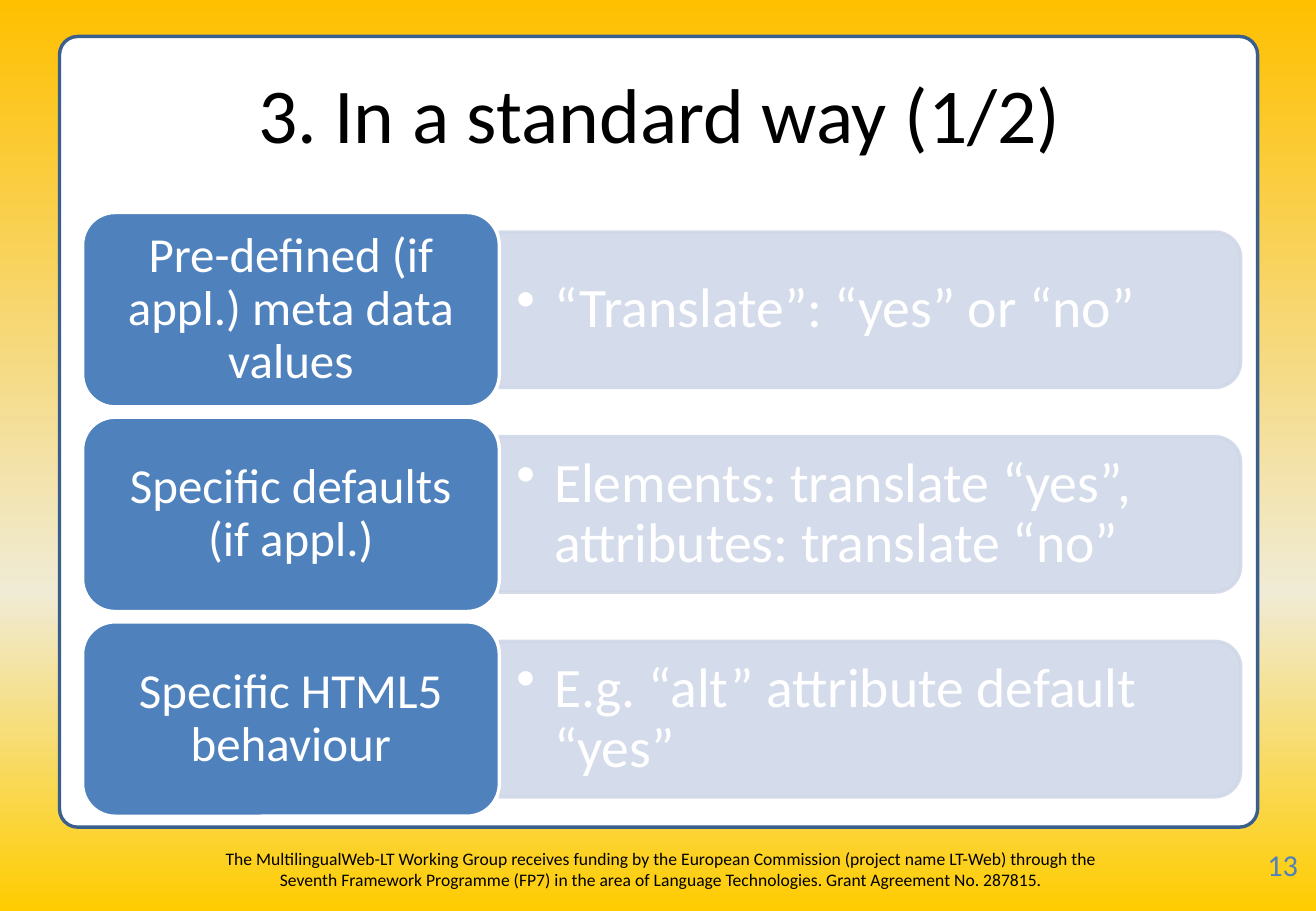
from copy import deepcopy

from lxml import etree
from pptx import Presentation
from pptx.dml.color import RGBColor
from pptx.enum.shapes import MSO_SHAPE
from pptx.enum.text import MSO_ANCHOR, PP_ALIGN
from pptx.oxml.ns import qn
from pptx.util import Inches, Pt

ROUNDED = MSO_SHAPE.ROUNDED_RECTANGLE
ROUNDED_TOP = MSO_SHAPE.ROUND_2_SAME_RECTANGLE
CENTER, LEFT = PP_ALIGN.CENTER, PP_ALIGN.LEFT
MIDDLE, TOP = MSO_ANCHOR.MIDDLE, MSO_ANCHOR.TOP

COLORS = {
    "amber": "FFC000",
    "cream": "F0EBD5",
    "gold": "FFCC00",
    "white": "FFFFFF",
    "black": "000000",
    "frame": "3A5F8C",
    "blue": "4F81BD",
    "pale": "D0D8E8",
}
BACKGROUND = [(0, "amber"), (0.65, "cream"), (1, "gold")]
ROWS = [
    ("Pre-defined (if appl.) meta data values", "“Translate”: “yes” or “no”"),
    ("Specific defaults (if appl.)", "Elements: translate “yes”, attributes: translate “no”"),
    ("Specific HTML5 behaviour", "E.g. “alt” attribute default “yes”"),
]
FOOTER = (
    "The MultilingualWeb-LT Working Group receives funding by the European Commission "
    "(project name LT-Web) through the Seventh Framework Programme (FP7) in the area of "
    "Language Technologies. Grant Agreement No. 287815."
)

ROW_TOP, ROW_STEP = 1.75, 1.685
LABEL_LEFT, LABEL_WIDTH, LABEL_HEIGHT = 0.68, 3.43, 1.6
BAR_LEFT, BAR_WIDTH, BAR_HEIGHT = 4.11, 6.1, 1.28


class SlideBuilder:
    font = "Calibri"

    def __init__(self, page):
        self.page = page

    def color(self, name):
        return RGBColor.from_string(COLORS[name])

    def background(self, stops):
        fill = self.page.background.fill
        fill.gradient()
        fill.gradient_angle = 270
        stop_list = self.page.element.find(".//" + qn("a:gsLst"))
        stop_list.append(deepcopy(stop_list[-1]))
        for stop, (position, name) in zip(fill.gradient_stops, stops):
            stop.position = position
            stop.color.rgb = self.color(name)

    def shape(self, kind, left, top, width, height, fill, line, adjust=None, opacity=None):
        shape = self.page.shapes.add_shape(
            kind, Inches(left), Inches(top), Inches(width), Inches(height))
        shape.shadow.inherit = False
        shape.fill.solid()
        shape.fill.fore_color.rgb = self.color(fill)
        shape.line.color.rgb = self.color(line)
        shape.line.width = Pt(2)
        if adjust is not None:
            shape.adjustments[0] = adjust
        if opacity is not None:
            for color in shape.element.spPr.iter(qn("a:srgbClr")):
                etree.SubElement(color, qn("a:alpha"), val=str(opacity * 1000))
        return shape

    def text_box(self, left, top, width, height, text, **style):
        box = self.page.shapes.add_textbox(
            Inches(left), Inches(top), Inches(width), Inches(height))
        self.set_text(box, text, **style)

    def set_text(self, box, text, size, color, align=LEFT, anchor=TOP,
                 inset=(0.1, 0.05), spacing=None, bullet=False):
        frame = box.text_frame
        frame.word_wrap = True
        frame.vertical_anchor = anchor
        frame.margin_left = frame.margin_right = Inches(inset[0])
        frame.margin_top = frame.margin_bottom = Inches(inset[1])
        para = frame.paragraphs[0]
        para.text = text
        para.alignment = align
        if spacing is not None:
            para.line_spacing = spacing
        if bullet:
            properties = para._p.get_or_add_pPr()
            properties.set("marL", str(Inches(0.31)))
            properties.set("indent", str(Inches(-0.31)))
            etree.SubElement(properties, qn("a:buChar"), char="•")
        para.font.name = self.font
        para.font.size = Pt(size)
        para.font.color.rgb = self.color(color)

    def row(self, top, label, detail):
        middle = top + LABEL_HEIGHT / 2
        bar = self.shape(
            ROUNDED_TOP, BAR_LEFT + (BAR_WIDTH - BAR_HEIGHT) / 2, middle - BAR_WIDTH / 2,
            BAR_HEIGHT, BAR_WIDTH, "pale", "pale", opacity=90)
        bar.rotation = 90
        self.text_box(
            BAR_LEFT, middle - 0.58, 6.03, 1.16, detail, size=33, color="white",
            anchor=MIDDLE, inset=(0.14, 0.07), spacing=0.9, bullet=True)
        tile = self.shape(
            ROUNDED, LABEL_LEFT, top, LABEL_WIDTH, LABEL_HEIGHT, "blue", "white")
        self.set_text(tile, label, size=29, color="white", align=CENTER,
                      anchor=MIDDLE, inset=(0.12, 0.06), spacing=0.9)


def main():
    deck = Presentation()
    deck.slide_width, deck.slide_height = Inches(10.83), Inches(7.5)
    builder = SlideBuilder(deck.slides.add_slide(deck.slide_layouts[6]))
    builder.background(BACKGROUND)
    builder.shape(ROUNDED, 0.49, 0.3, 9.86, 6.51, "white", "frame", adjust=0.023)
    builder.text_box(1.62, 6.93, 7.64, 0.4, FOOTER, size=10.4, color="black", align=CENTER)
    builder.text_box(0.51, 0.3, 9.83, 1.25, "3. In a standard way (1/2)",
                     size=46, color="black", align=CENTER, anchor=MIDDLE)
    for index, (label, detail) in enumerate(ROWS):
        builder.row(ROW_TOP + index * ROW_STEP, label, detail)
    builder.text_box(10.41, 6.96, 0.44, 0.4, "13", size=18, color="blue", inset=(0.02, 0.01))
    deck.save("out.pptx")


if __name__ == "__main__":
    main()
